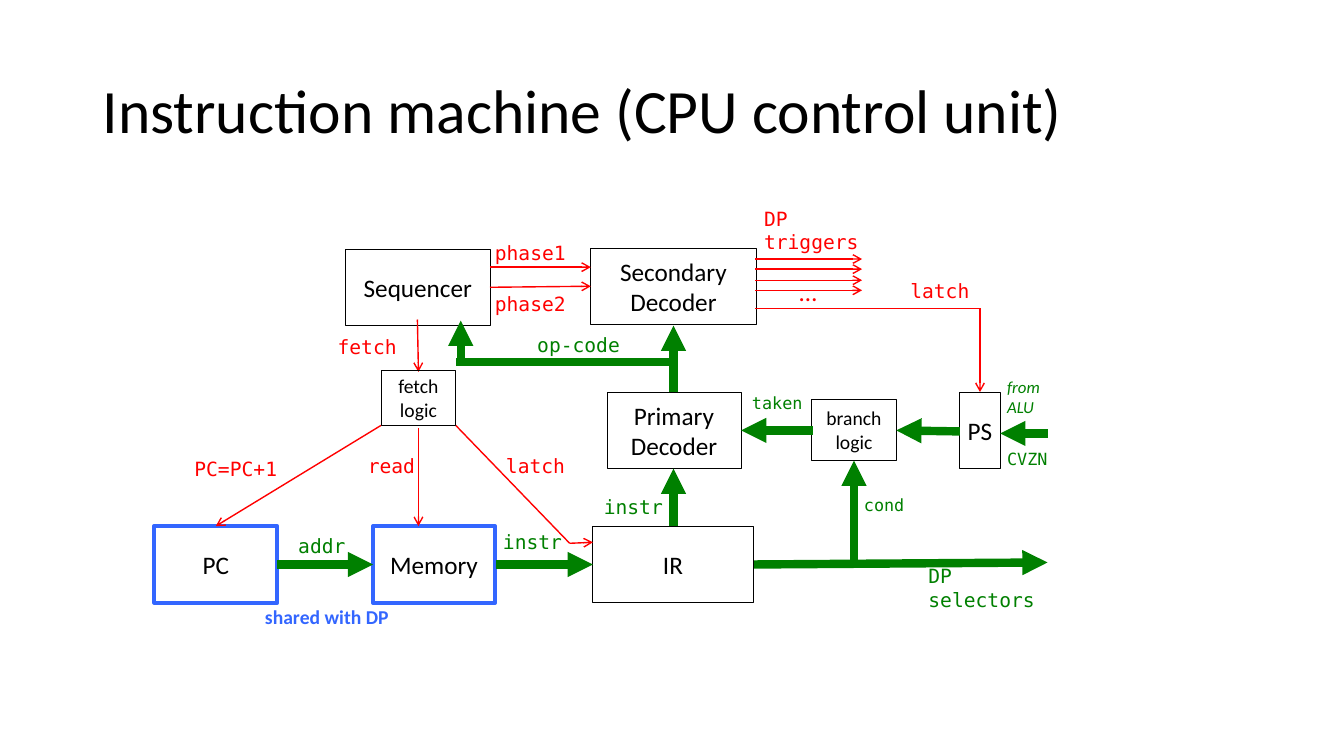
from dataclasses import dataclass
from typing import NamedTuple

from lxml import etree
from pptx import Presentation
from pptx.dml.color import RGBColor
from pptx.enum.shapes import MSO_CONNECTOR, MSO_SHAPE
from pptx.enum.text import MSO_ANCHOR, MSO_AUTO_SIZE, PP_ALIGN
from pptx.oxml.ns import qn
from pptx.util import Pt

STRAIGHT = MSO_CONNECTOR.STRAIGHT
RECTANGLE = MSO_SHAPE.RECTANGLE
MIDDLE = MSO_ANCHOR.MIDDLE
CENTER = PP_ALIGN.CENTER
GROW = MSO_AUTO_SIZE.SHAPE_TO_FIT_TEXT
EMU_PER_PX = 9144


@dataclass(frozen=True)
class Theme:
    """Colours, fonts, type sizes and line widths of the slide."""
    ink: RGBColor = RGBColor(0, 0, 0)
    control: RGBColor = RGBColor(255, 0, 0)
    data: RGBColor = RGBColor(0, 128, 0)
    shared: RGBColor = RGBColor(51, 102, 255)
    sans: str = "Calibri"
    mono: str = "DejaVu Sans Mono"
    title: int = 44
    large: int = 18
    medium: int = 14
    small: int = 12
    outline: float = 0.5
    shared_outline: int = 3
    control_wire: int = 1
    data_wire: int = 6


THEME = Theme()


class Box(NamedTuple):
    """A rectangle in px."""
    left: int
    top: int
    width: int
    height: int

    def inside(self, left, top, width, height):
        """Return a box placed relative to this one."""
        return Box(self.left + left, self.top + top, width, height)

    def emu(self):
        """Return the four lengths in EMU."""
        return [length * EMU_PER_PX for length in self]


def write(paragraph, text, size, color, font, bold=False, italic=False):
    """Add one run per line of text, with breaks between them."""
    for index, line in enumerate(text.split("\n")):
        if index:
            paragraph.add_line_break()
        run = paragraph.add_run()
        run.text = line
        run.font.size = Pt(size)
        run.font.name = font
        run.font.color.rgb = color
        run.font.bold = bold
        run.font.italic = italic


def add_block(slide, box, text, size=THEME.large, shared=False, tight=False):
    """Draw an outlined unit of the processor with its centred name."""
    shape = slide.shapes.add_shape(RECTANGLE, *box.emu())
    shape.shadow.inherit = False
    shape.fill.background()
    shape.line.color.rgb = THEME.shared if shared else THEME.ink
    shape.line.width = Pt(THEME.shared_outline if shared else THEME.outline)
    frame = shape.text_frame
    frame.word_wrap = True
    frame.vertical_anchor = MIDDLE
    if tight:
        frame.margin_left = frame.margin_right = 0
        frame.margin_top = frame.margin_bottom = 0
    paragraph = frame.paragraphs[0]
    paragraph.alignment = CENTER
    write(paragraph, text, size, THEME.ink, THEME.sans)


def add_label(slide, box, text, color, size=THEME.medium, font=THEME.mono,
              bold=False, italic=False):
    """Place an unwrapped text label."""
    frame = slide.shapes.add_textbox(*box.emu()).text_frame
    frame.word_wrap = False
    frame.auto_size = GROW
    write(frame.paragraphs[0], text, size, color, font, bold, italic)


def add_wire(slide, box, points, color, width, head):
    """Join the points with lines, the last of which may carry an arrowhead."""
    ends = [((box.left + x) * EMU_PER_PX, (box.top + y) * EMU_PER_PX) for x, y in points]
    for start, end in zip(ends, ends[1:]):
        connector = slide.shapes.add_connector(STRAIGHT, *start, *end)
        connector.line.color.rgb = color
        connector.line.width = Pt(width)
        properties = connector.element.spPr
        etree.SubElement(properties, qn("a:effectLst"))
        if head and end == ends[-1]:
            line = properties.find(qn("a:ln"))
            etree.SubElement(line, qn("a:tailEnd"), type=head)


def add_signal(slide, box, *points):
    """Draw a thin control signal."""
    add_wire(slide, box, points, THEME.control, THEME.control_wire, "arrow")


def add_bus(slide, box, *points, head="triangle"):
    """Draw a thick data bus."""
    add_wire(slide, box, points, THEME.data, THEME.data_wire, head)


def draw_title(slide, box):
    """Write the slide title."""
    frame = slide.shapes.add_textbox(*box.emu()).text_frame
    frame.word_wrap = True
    frame.vertical_anchor = MIDDLE
    paragraph = frame.paragraphs[0]
    paragraph.line_spacing = 0.9
    write(paragraph, "Instruction machine (CPU control unit)",
          THEME.title, THEME.ink, THEME.sans)


def draw_sequencing(slide, box):
    """Draw the sequencer, the secondary decoder and their signals."""
    add_block(slide, box.inside(18, 47, 143, 76), "Sequencer")
    add_block(slide, box.inside(261, 46, 164, 76), "Secondary Decoder")
    add_signal(slide, box, (161, 65), (261, 65))
    add_signal(slide, box, (161, 85), (261, 84))
    for index in range(4):
        y = 57 + round(index * 31 / 3)
        add_signal(slide, box, (424, y), (530, y))
    add_signal(slide, box, (424, 106), (647, 106), (647, 189))
    add_label(slide, box.inside(458, 69, 38, 40), "…", THEME.control,
              THEME.large, THEME.sans)
    for text, *place in (("phase1", 156, 34, 91, 34), ("phase2", 156, 85, 91, 34),
                         ("DP \ntriggers", 423, 0, 114, 57), ("latch", 568, 72, 79, 34)):
        add_label(slide, box.inside(*place), text, THEME.control)


def draw_fetch(slide, box):
    """Draw the fetch logic with the program counter and the memory."""
    add_block(slide, box.inside(0, 205, 122, 76), "PC", shared=True)
    add_block(slide, box.inside(217, 205, 121, 76), "Memory", shared=True)
    add_signal(slide, box, (261, 0), (262, 52))
    add_signal(slide, box, (262, 108), (262, 205))
    add_signal(slide, box, (225, 105), (61, 205))
    add_signal(slide, box, (299, 105), (412, 222), (435, 221))
    add_bus(slide, box, (122, 243), (217, 243))
    add_bus(slide, box, (339, 243), (435, 243))
    for text, *place in (("fetch", 172, 10, 79, 34), ("PC=PC+1", 30, 131, 103, 34),
                         ("read", 202, 128, 67, 34), ("latch", 339, 128, 79, 34)):
        add_label(slide, box.inside(*place), text, THEME.control)
    add_label(slide, box.inside(133, 208, 67, 34), "addr", THEME.data)
    add_label(slide, box.inside(336, 204, 79, 34), "instr", THEME.data)
    add_label(slide, box.inside(100, 278, 144, 34), "shared with DP", THEME.shared,
              font=THEME.sans, bold=True)
    add_block(slide, box.inside(225, 50, 74, 55), "fetch\nlogic", THEME.medium)


def draw_decoding(slide, box):
    """Draw the instruction register, the primary decoder and their buses."""
    add_block(slide, box.inside(150, 71, 133, 76), "Primary Decoder")
    add_block(slide, box.inside(136, 204, 159, 76), "IR")
    add_bus(slide, box, (216, 71), (216, 5))
    add_bus(slide, box, (216, 204), (216, 147))
    add_bus(slide, box, (216, 41), (0, 41), head=None)
    add_bus(slide, box, (5, 41), (5, 0))
    add_bus(slide, box, (296, 242), (587, 240))
    for text, *place in (("op-code", 71, 7, 103, 34), ("instr", 137, 168, 79, 34),
                         ("DP \nselectors", 459, 237, 126, 57)):
        add_label(slide, box.inside(*place), text, THEME.data)


def draw_branching(slide, box):
    """Draw the processor status and the branch logic."""
    add_block(slide, box.inside(217, 20, 40, 76), "PS", tight=True)
    add_block(slide, box.inside(70, 27, 84, 61), "branch logic", THEME.medium)
    add_bus(slide, box, (217, 59), (154, 58))
    add_bus(slide, box, (112, 189), (112, 88))
    add_bus(slide, box, (71, 58), (0, 58))
    add_bus(slide, box, (304, 61), (257, 61))
    for text, *place in (("CVZN", 254, 71, 61, 30), ("cond", 112, 117, 61, 30),
                         ("taken", 1, 16, 71, 30)):
        add_label(slide, box.inside(*place), text, THEME.data, THEME.small)
    add_label(slide, box.inside(254, 0, 58, 50), "from \nALU", THEME.data,
              THEME.small, THEME.sans, italic=True)


def main():
    """Build and save the presentation."""
    presentation = Presentation()
    presentation.slide_width = 1333 * EMU_PER_PX
    presentation.slide_height = 750 * EMU_PER_PX
    slide = presentation.slides.add_slide(presentation.slide_layouts[6])
    draw_title(slide, Box(92, 40, 1150, 145))
    draw_sequencing(slide, Box(325, 200, 647, 189))
    draw_decoding(slide, Box(452, 318, 587, 294))
    draw_fetch(slide, Box(153, 317, 435, 312))
    draw_branching(slide, Box(735, 369, 315, 189))
    presentation.save("out.pptx")


if __name__ == "__main__":
    main()
